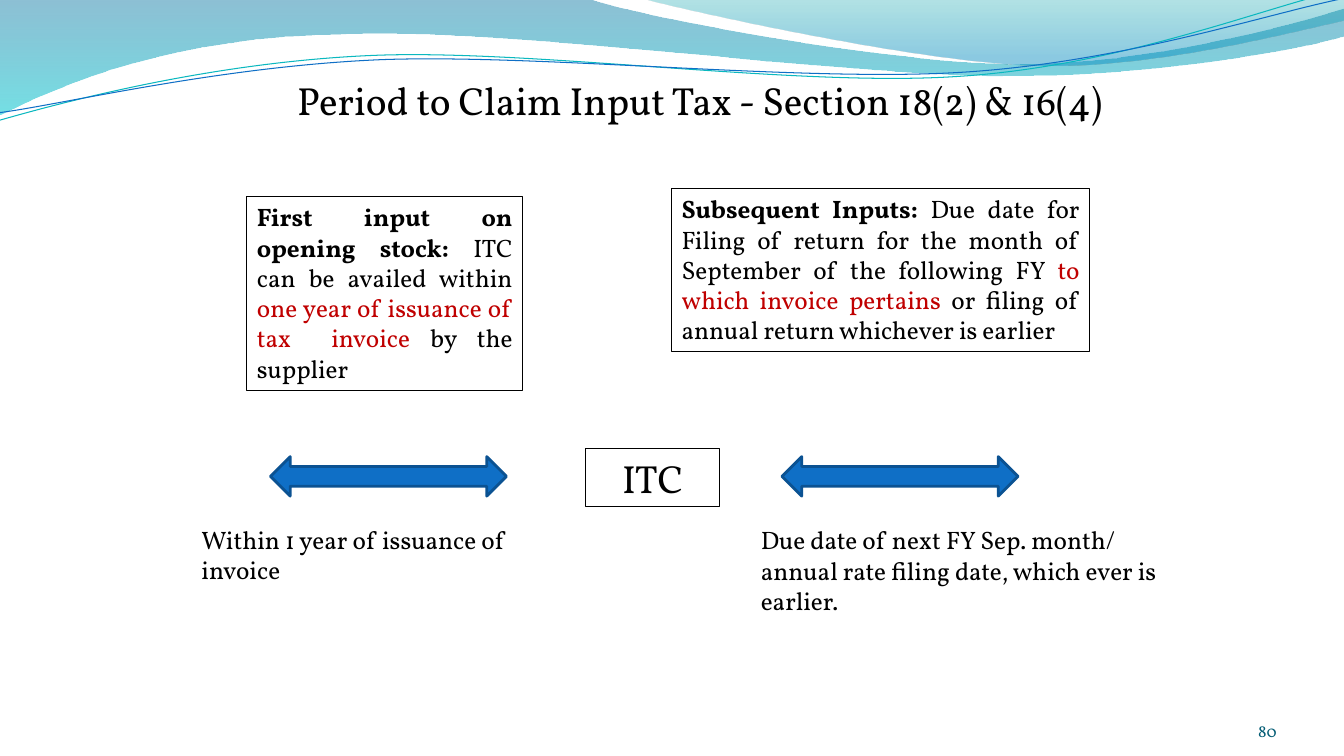
"""Build the slide on the period to claim input tax."""
from dataclasses import dataclass

from lxml import etree
from pptx import Presentation
from pptx.dml.color import RGBColor
from pptx.enum.shapes import MSO_SHAPE
from pptx.enum.text import MSO_ANCHOR, MSO_AUTO_SIZE, PP_ALIGN
from pptx.oxml.ns import qn
from pptx.util import Inches, Pt

RECTANGLE, DOUBLE_ARROW = MSO_SHAPE.RECTANGLE, MSO_SHAPE.LEFT_RIGHT_ARROW
LEFT, CENTER, RIGHT, JUSTIFY = PP_ALIGN.LEFT, PP_ALIGN.CENTER, PP_ALIGN.RIGHT, PP_ALIGN.JUSTIFY
TOP, MIDDLE, BOTTOM = MSO_ANCHOR.TOP, MSO_ANCHOR.MIDDLE, MSO_ANCHOR.BOTTOM
NO_AUTOFIT = MSO_AUTO_SIZE.NONE


@dataclass(frozen=True)
class Theme:
    """Hold the font, type sizes, colours and line widths."""
    font: str = "Vollkorn"
    heading: int = 28
    body: int = 18
    small: int = 12
    ink: str = "000000"
    accent: str = "C00000"
    number: str = "045D75"
    arrow: str = "0F6FC6"
    arrow_edge: str = "0B5292"
    teal: str = "0AB8BF"
    thin: float = 0.75
    thick: float = 2


THEME = Theme()
COLUMNS, ROWS = 80, 45

TITLE = ("Period to Claim Input Tax - Section 18(2) & 16(4)", (16.1, 4.25, 51.1, 3.4))
RULES = [
    ((14.7, 11.72, 16.4, 11.55), [
        ("First input on opening stock:", {"bold": True}),
        (" ITC can be availed within ", {}),
        ("one year of issuance of tax  invoice ", {"color": THEME.accent}),
        ("by the supplier", {})]),
    ((39.98, 11.23, 24.87, 9.72), [
        ("Subsequent Inputs:", {"bold": True}),
        (" Due date for Filing of return for the month of September of the following FY ", {}),
        ("to which invoice pertains ", {"color": THEME.accent}),
        ("or filing of annual return whichever is earlier", {})]),
]
ARROW_LEFTS = (16.1, 46.55)
ARROW_TOP, ARROW_WIDTH, ARROW_HEIGHT = 27.18, 14.05, 2.35
HUB = ("ITC", (34.85, 26.7, 8, 3.45))
NOTES = [
    ("Within 1 year of issuance of invoice", (11.4, 30.93, 23, 2.4)),
    ("Due date of next FY Sep. month/ annual rate filing date, which ever is earlier.",
     (44.7, 30.93, 25.3, 6.05)),
]
PAGE = ("80", (69.35, 41.7, 6.65, 2.4))

BANDS = [
    ([(0, 0), (35.2, 0), (38, 1, 53.1, 3.8, 60.7, 3.8), (68.3, 3.8, 76.7, 1.55, 80, 0.55),
      (80.1, 2.15), (78.65, 2.65, 69.6, 4.55, 59.65, 4.5),
      (49.75, 4.5, 30.55, 1.7, 20.6, 2.05), (10.3, 2.15, 3.65, 5, 0, 6.8)],
     [(0, "0074A1", 45), (1, "00C6CF", 55)]),
    ([(38.35, 0), (40.75, 0.65, 54.55, 3.7, 61.5, 3.9),
      (68.45, 4.15, 76.9, 1.9, 80, 1.25), (80, 0)],
     [(0, "00A1A9", 30), (0.8, "008BBF", 45)]),
]
WAVES = [
    ([(0, 7.15), (3.85, 6.05, 12.65, 3.7, 22.15, 3.3), (31.6, 2.9, 47.4, 5.2, 57, 4.55),
      (66.6, 3.95, 75.1, 0.5, 79.85, -0.6)], THEME.teal),
    ([(0, 6.7), (3.8, 6.2, 13.1, 3.95, 22.7, 3.55), (32.2, 3.2, 47.75, 4.9, 57.3, 4.3),
      (66.9, 3.7, 75.3, 0.85, 80, -0.1)], THEME.arrow),
]

presentation = Presentation()
presentation.slide_width, presentation.slide_height = Inches(13.33), Inches(7.5)
COLUMN, ROW = presentation.slide_width / COLUMNS, presentation.slide_height / ROWS
slide = presentation.slides.add_slide(presentation.slide_layouts[5])


def place(box):
    """Turn grid units into slide lengths."""
    return [round(value * unit) for value, unit in zip(box, (COLUMN, ROW, COLUMN, ROW))]


def write(shape, runs, size=THEME.body, color=THEME.ink, align=LEFT, anchor=TOP, margin=None):
    """Fill a shape with one paragraph of formatted runs."""
    frame = shape.text_frame
    frame.word_wrap, frame.auto_size, frame.vertical_anchor = True, NO_AUTOFIT, anchor
    if margin is not None:
        frame.margin_left = frame.margin_right = frame.margin_top = frame.margin_bottom = margin
    paragraph = frame.paragraphs[0]
    paragraph.alignment = align
    for text, style in [(runs, {})] if isinstance(runs, str) else runs:
        run = paragraph.add_run()
        run.text = text
        run.font.name, run.font.size = THEME.font, Pt(size)
        run.font.bold = style.get("bold", False)
        run.font.color.rgb = RGBColor.from_string(style.get("color", color))


def outline(shape, color, width):
    """Give a shape a plain line and no shadow."""
    shape.shadow.inherit = False
    shape.line.color.rgb = RGBColor.from_string(color)
    shape.line.width = Pt(width)


def draw_outline(steps, close):
    """Draw a freeform whose six-number steps are Bezier curves."""
    points = [place(step[index:index + 2]) for step in steps for index in range(0, len(step), 2)]
    builder = slide.shapes.build_freeform(*points[0])
    builder.add_line_segments(points[1:], close=close)
    shape = builder.convert_to_shape()
    shape.shadow.inherit = False
    segments = iter(list(shape._element.iter(qn("a:lnTo"))))
    for step in steps[1:]:
        segment = next(segments)
        if len(step) == 6:
            curve = etree.Element(qn("a:cubicBezTo"))
            segment.addprevious(curve)
            for part in (segment, next(segments), next(segments)):
                curve.append(part[0])
                part.getparent().remove(part)
    return shape


def add_box(box):
    """Add an unfilled rectangle with a thin line."""
    shape = slide.shapes.add_shape(RECTANGLE, *place(box))
    shape.fill.background()
    outline(shape, THEME.ink, THEME.thin)
    return shape


for steps, stops in BANDS:
    band = draw_outline(steps, True)
    band.line.fill.background()
    band.fill.gradient()
    band.fill.gradient_angle = 270
    for stop, (position, color, opacity) in zip(band.fill.gradient_stops, stops):
        stop.position = position
        stop.color.rgb = RGBColor.from_string(color)
    colors = band.fill._xPr.iter(qn("a:srgbClr"))
    for element, (position, color, opacity) in zip(colors, stops):
        etree.SubElement(element, qn("a:alpha")).set("val", str(opacity * 1000))

for steps, color in WAVES:
    wave = draw_outline(steps, False)
    wave.fill.background()
    outline(wave, color, THEME.thin)

title = slide.shapes.title
title.left, title.top, title.width, title.height = place(TITLE[1])
write(title, TITLE[0], size=THEME.heading, align=CENTER)

for box, runs in RULES:
    write(add_box(box), runs, align=JUSTIFY)

for left in ARROW_LEFTS:
    arrow = slide.shapes.add_shape(
        DOUBLE_ARROW, *place((left, ARROW_TOP, ARROW_WIDTH, ARROW_HEIGHT)))
    arrow.fill.solid()
    arrow.fill.fore_color.rgb = RGBColor.from_string(THEME.arrow)
    outline(arrow, THEME.arrow_edge, THEME.thick)

write(add_box(HUB[1]), HUB[0], size=THEME.heading, align=CENTER, anchor=MIDDLE)

for text, box in NOTES:
    write(slide.shapes.add_textbox(*place(box)), text)

write(slide.shapes.add_textbox(*place(PAGE[1])), PAGE[0], size=THEME.small,
      color=THEME.number, align=RIGHT, anchor=BOTTOM, margin=0)

presentation.save("out.pptx")
